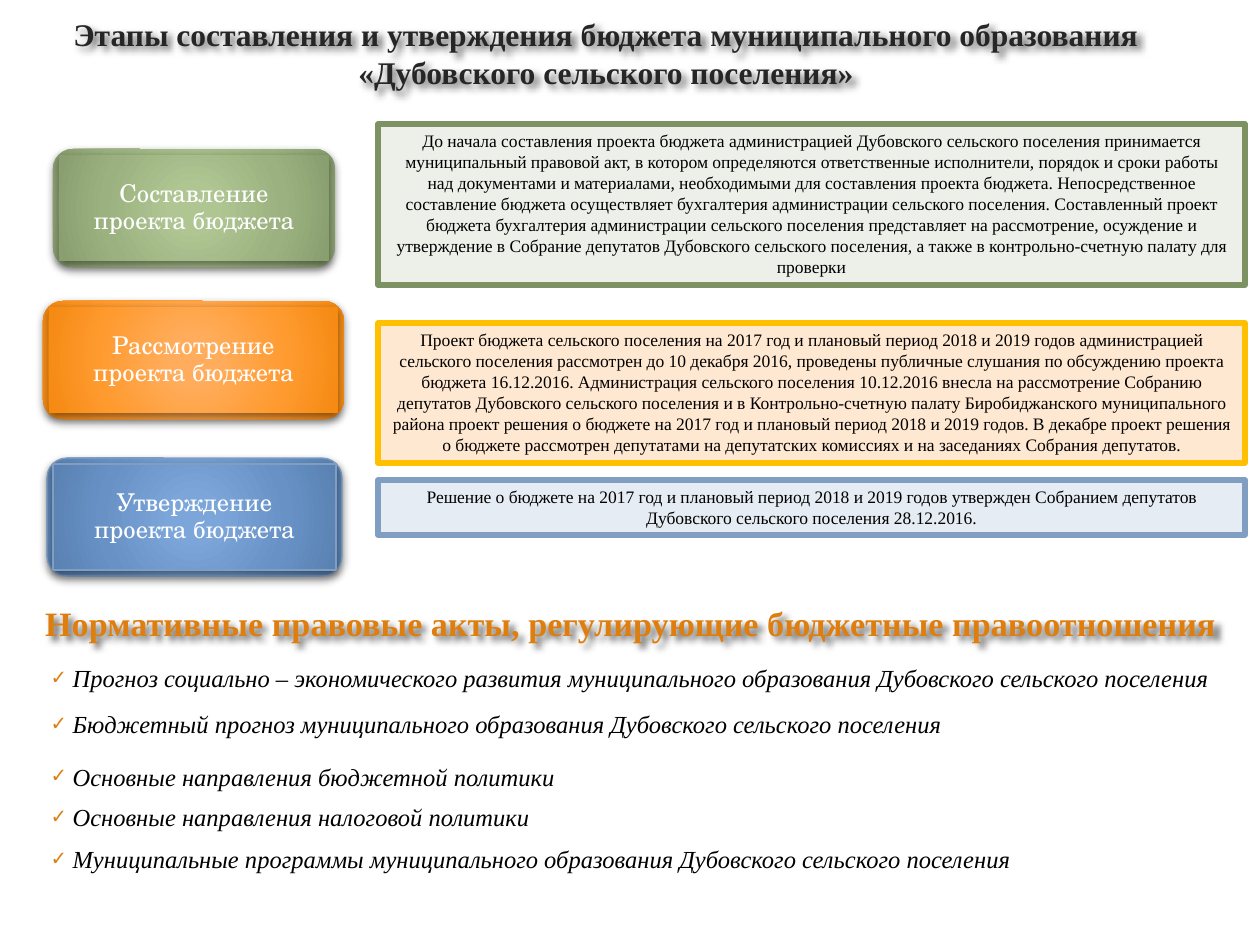
from lxml.etree import SubElement
from pptx import Presentation
from pptx.dml.color import RGBColor
from pptx.enum.shapes import MSO_SHAPE
from pptx.enum.text import MSO_ANCHOR, MSO_AUTO_SIZE, PP_ALIGN
from pptx.oxml.ns import qn
from pptx.util import Pt

SCALE = 914400 / 126
SERIF = "Times New Roman"
SCHOLA = "TeX Gyre Schola"
BLACK = RGBColor(0x00, 0x00, 0x00)
WHITE = RGBColor(0xFF, 0xFF, 0xFF)
DARK = RGBColor(0x26, 0x26, 0x26)
ORANGE = RGBColor(0xDD, 0x7E, 0x0E)
GREEN_LINE = RGBColor(0x7D, 0x92, 0x63)
GREEN_PALE = RGBColor(0xED, 0xF0, 0xE9)
AMBER = RGBColor(0xFF, 0xC0, 0x00)
ORANGE_PALE = RGBColor(0xFF, 0xE8, 0xD1)
BLUE_LINE = RGBColor(0x80, 0x9E, 0xC2)
BLUE_PALE = RGBColor(0xE6, 0xEC, 0xF3)
STOPS = (0, 15, 62, 97, 100)
GREENS = [RGBColor.from_string(c) for c in ("AFC794", "AFC693", "9BB280", "8A9F70", "879D6D")]
ORANGES = [RGBColor.from_string(c) for c in ("FFAE5E", "FFAD5C", "FF9A2F", "F58B14", "F68909")]
BLUES = [RGBColor.from_string(c) for c in ("7CA6DB", "7CA6DA", "6892C6", "5A82B2", "557FB0")]


def px(n):
    return round(n * SCALE)


def node(parent, tag, **attrs):
    return SubElement(parent, qn(tag), {k: str(v) for k, v in attrs.items()})


class Deck:
    def __init__(self, width, height):
        self.prs = Presentation()
        self.prs.slide_width, self.prs.slide_height = px(width), px(height)
        self.s = self.prs.slides.add_slide(self.prs.slide_layouts[1])

    def place(self, sp, box):
        sp.left, sp.top, sp.width, sp.height = map(px, box)

    def frame(self, sp, anchor, size=MSO_AUTO_SIZE.NONE):
        tf = sp.text_frame
        tf.word_wrap = True
        tf.auto_size = size
        tf.vertical_anchor = anchor
        return tf

    def add_text(self, p, text, size, color, font=SERIF, align=PP_ALIGN.CENTER, bold=False, italic=False):
        p.alignment = align
        r = p.add_run()
        r.text = text
        f = r.font
        f.name, f.size, f.bold, f.italic = font, Pt(size), bold, italic
        f.color.rgb = color

    def shadow(self, sp, blur, dist, angle, alpha):
        sp.shadow.inherit = False
        effects = sp._element.spPr.find(qn("a:effectLst"))
        shade = node(effects, "a:outerShdw", blurRad=Pt(blur), dist=Pt(dist),
                     dir=angle * 60000, algn="ctr", rotWithShape=0)
        node(node(shade, "a:srgbClr", val=BLACK), "a:alpha", val=alpha * 1000)

    def radial(self, sp, colors):
        sp.fill.gradient()
        grad = sp._element.spPr.find(qn("a:gradFill"))
        for child in list(grad):
            grad.remove(child)
        stops = node(grad, "a:gsLst")
        for pos, color in zip(STOPS, colors):
            node(node(stops, "a:gs", pos=pos * 1000), "a:srgbClr", val=color)
        circle = node(grad, "a:path", path="circle")
        node(circle, "a:fillToRect", l=50000, t=50000, r=50000, b=50000)

    def outline(self, sp, color, width):
        if color is None:
            sp.line.fill.background()
        else:
            sp.line.color.rgb = color
            sp.line.width = Pt(width)

    def heading(self, text, box, size, color, sp=None):
        sp = sp or self.s.shapes.add_textbox(0, 0, 0, 0)
        self.place(sp, box)
        tf = self.frame(sp, MSO_ANCHOR.MIDDLE)
        self.add_text(tf.paragraphs[0], text, size, color, bold=True)
        self.shadow(sp, 4, 3, 45, 60)

    def title(self, text, box, size, color):
        self.heading(text, box, size, color, self.s.shapes.title)

    def button(self, text, box, colors, line=None):
        x, y, w, h = box
        grp = self.s.shapes.add_group_shape()
        for kind, inset in ((MSO_SHAPE.ROUNDED_RECTANGLE, 0), (MSO_SHAPE.RECTANGLE, 6)):
            sp = grp.shapes.add_shape(kind, px(x + inset), px(y + inset),
                                      px(w - 2 * inset), px(h - 2 * inset))
            self.radial(sp, colors)
            self.outline(sp, line, 0.75)
            self.shadow(sp, 5, 2, 90, 43)
        tf = self.frame(sp, MSO_ANCHOR.MIDDLE)
        tf.margin_left = tf.margin_right = px(31)
        tf.margin_top = tf.margin_bottom = 0
        p = tf.paragraphs[0]
        p.line_spacing = 0.9
        self.add_text(p, text, 14, WHITE, SCHOLA)

    def panel(self, text, box, fill, line):
        sp = self.s.shapes.add_shape(MSO_SHAPE.RECTANGLE, *map(px, box))
        sp.shadow.inherit = False
        sp.fill.solid()
        sp.fill.fore_color.rgb = fill
        self.outline(sp, line, 3)
        tf = self.frame(sp, MSO_ANCHOR.TOP, MSO_AUTO_SIZE.SHAPE_TO_FIT_TEXT)
        self.add_text(tf.paragraphs[0], text, 10, BLACK)

    def checklist(self, items, box):
        sp = self.s.placeholders[1]
        self.place(sp, box)
        tf = self.frame(sp, MSO_ANCHOR.TOP)
        for i, (text, before) in enumerate(items):
            p = tf.add_paragraph() if i else tf.paragraphs[0]
            pPr = p._p.get_or_add_pPr()
            pPr.set("marL", str(px(22)))
            pPr.set("indent", str(-px(22)))
            node(node(pPr, "a:buClr"), "a:srgbClr", val=ORANGE)
            node(pPr, "a:buSzPct", val=80000)
            node(pPr, "a:buChar", char="✓")
            p.space_before = Pt(before)
            self.add_text(p, text, 14, BLACK, align=PP_ALIGN.LEFT, italic=True)


STAGES = [
    ("Составление проекта бюджета", (53, 149, 282, 118), GREENS, None,
     "До начала составления проекта бюджета администрацией Дубовского сельского поселения принимается муниципальный правовой акт, в котором определяются ответственные исполнители, порядок и сроки работы над документами и материалами, необходимыми для составления проекта бюджета. Непосредственное составление бюджета осуществляет бухгалтерия администрации сельского поселения. Составленный проект бюджета бухгалтерия администрации сельского поселения представляет на рассмотрение, осуждение и утверждение в Собрание депутатов Дубовского сельского поселения, а также в контрольно-счетную палату для проверки",
     (378, 124, 867, 161), GREEN_PALE, GREEN_LINE),
    ("Рассмотрение проекта бюджета", (43, 301, 301, 118), ORANGES, None,
     "Проект бюджета сельского поселения на 2017 год и плановый период 2018 и 2019 годов администрацией сельского поселения рассмотрен до 10 декабря 2016, проведены публичные слушания по обсуждению проекта бюджета 16.12.2016. Администрация сельского поселения 10.12.2016 внесла на рассмотрение Собранию депутатов Дубовского сельского поселения и в Контрольно-счетную палату Биробиджанского муниципального района проект решения о бюджете на 2017 год и плановый период 2018 и 2019 годов. В декабре проект решения о бюджете рассмотрен депутатами на депутатских комиссиях и на заседаниях Собрания депутатов.",
     (378, 323, 867, 140), ORANGE_PALE, AMBER),
    ("Утверждение проекта бюджета", (47, 458, 295, 118), BLUES, BLUE_LINE,
     "Решение о бюджете на 2017 год и плановый период 2018 и 2019 годов утвержден Собранием депутатов Дубовского сельского поселения 28.12.2016.",
     (378, 480, 867, 55), BLUE_PALE, BLUE_LINE),
]

ACTS = [
    ("Прогноз социально – экономического развития муниципального образования Дубовского сельского поселения", 0),
    ("Бюджетный прогноз муниципального образования Дубовского сельского поселения", 9.5),
    ("Основные направления бюджетной политики", 13),
    ("Основные направления налоговой политики", 6.5),
    ("Муниципальные программы муниципального образования Дубовского сельского поселения", 7),
]


def main():
    deck = Deck(1260, 945)
    deck.title("Этапы составления и утверждения бюджета муниципального образования «Дубовского сельского поселения»",
               (16, -8, 1180, 122), 18, DARK)
    for label, button_box, colors, edge, text, panel_box, fill, line in STAGES:
        deck.button(label, button_box, colors, edge)
        deck.panel(text, panel_box, fill, line)
    deck.heading("Нормативные правовые акты, регулирующие бюджетные правоотношения",
                 (16, 577, 1230, 91), 19.5, ORANGE)
    deck.checklist(ACTS, (38, 657, 1208, 244))
    deck.prs.save("out.pptx")


if __name__ == "__main__":
    main()
